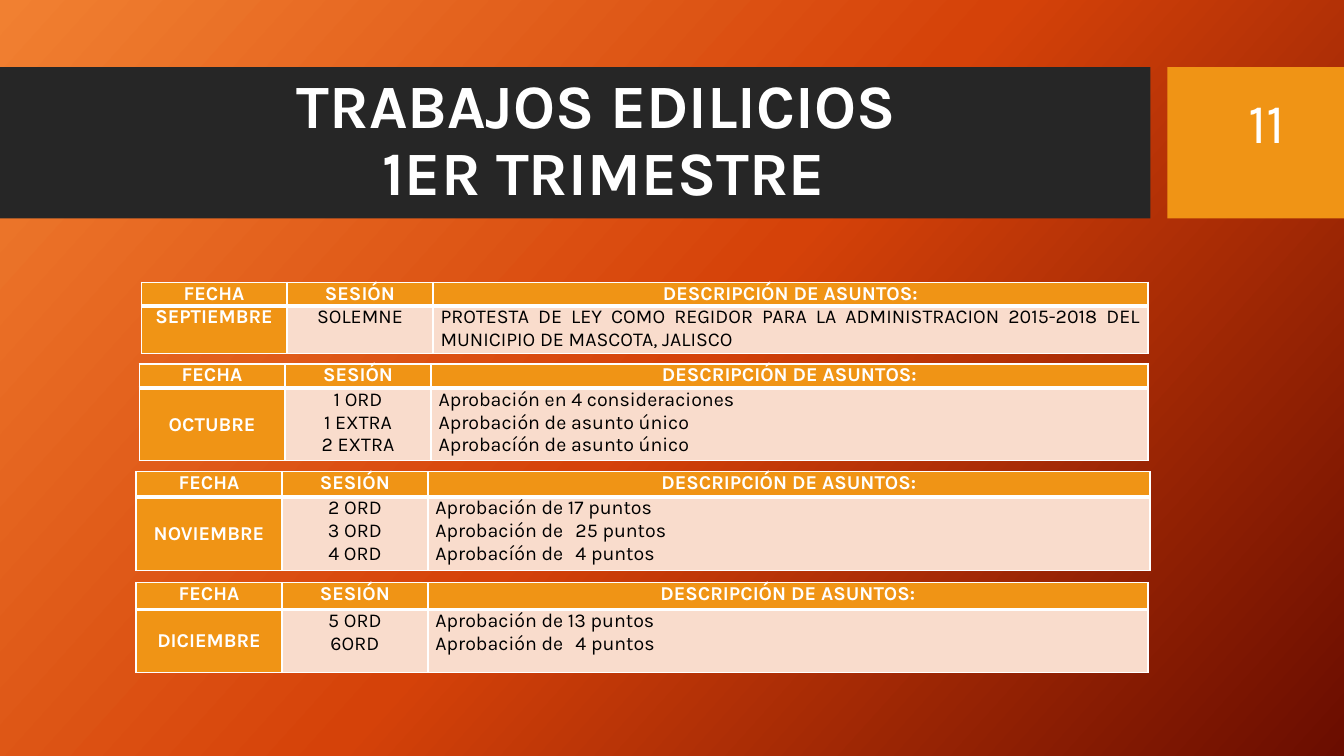
from pptx import Presentation
from pptx.dml.color import RGBColor
from pptx.enum.shapes import MSO_SHAPE
from pptx.enum.text import MSO_ANCHOR, MSO_AUTO_SIZE, PP_ALIGN
from pptx.oxml import parse_xml
from pptx.oxml.ns import nsdecls
from pptx.util import Pt

RECTANGLE = MSO_SHAPE.RECTANGLE
TOP, MIDDLE = MSO_ANCHOR.TOP, MSO_ANCHOR.MIDDLE
CENTER, JUSTIFY = PP_ALIGN.CENTER, PP_ALIGN.JUSTIFY
NO_AUTOFIT = MSO_AUTO_SIZE.NONE

FONT = "Karla"
WHITE, BLACK, CHARCOAL = "FFFFFF", "000000", "262626"
ORANGE, PEACH = "F09415", "F9DCCC"
GRADIENT = [(0, "F18031"), (50, "D54209"), (100, "6A0D00")]
GRADIENT_ANGLE = 42
HEADINGS = ["FECHA", "SESIÓN", "DESCRIPCIÓN DE ASUNTOS:"]
NARROW_COLUMN = 104.25
NUMBER_TAB = 100

MONTHS = [
    dict(name="SEPTIEMBRE", box=(100.8, 201.6, 719.3), rows=(17, 34), anchor=TOP,
         sessions=["SOLEMNE"],
         matters=["PROTESTA DE LEY COMO REGIDOR PARA LA ADMINISTRACION "
                  "2015-2018 DEL MUNICIPIO DE MASCOTA, JALISCO"]),
    dict(name="OCTUBRE", box=(99.4, 260, 720.7), rows=(17.3, 51.8),
         sessions=["1 ORD", "1 EXTRA", "2 EXTRA"],
         matters=["Aprobación en 4 consideraciones", "Aprobación de asunto único",
                  "Aprobacíón de asunto único"]),
    dict(name="NOVIEMBRE", box=(97.2, 337, 724.3), rows=(17.8, 53),
         sessions=["2 ORD", "3 ORD", "4 ORD"],
         matters=["Aprobación de 17 puntos", "Aprobación de\t25 puntos",
                  "Aprobacíón de\t4 puntos"]),
    dict(name="DICIEMBRE", box=(97.2, 416.2, 722.9), rows=(19.2, 45),
         sessions=["5 ORD", "6ORD"],
         matters=["Aprobación de 13 puntos", "Aprobación de\t4 puntos"]),
]


def color(hex_string):
    """Return the colour for a hex string."""
    return RGBColor.from_string(hex_string)


def write(frame, lines, size=14, ink=WHITE, bold=False, align=CENTER, spacing=None):
    """Fill a text frame with one formatted paragraph per line."""
    for index, line in enumerate(lines):
        paragraph = frame.add_paragraph() if index else frame.paragraphs[0]
        paragraph.alignment = align
        if spacing:
            paragraph.line_spacing = spacing
        paragraph.text = line
        if "\t" in line:
            paragraph._p.get_or_add_pPr().append(parse_xml(
                f'<a:tabLst {nsdecls("a")}><a:tab pos="{Pt(NUMBER_TAB)}" algn="l"/></a:tabLst>'))
        for run in paragraph.runs:
            run.font.name = FONT
            run.font.size = Pt(size)
            run.font.bold = bold
            run.font.color.rgb = color(ink)


def paint_background(slide):
    """Give the slide its diagonal gradient."""
    stops = "".join(f'<a:gs pos="{position * 1000}"><a:srgbClr val="{value}"/></a:gs>'
                    for position, value in GRADIENT)
    slide.element.cSld.insert(0, parse_xml(
        f'<p:bg {nsdecls("p", "a")}><p:bgPr><a:gradFill rotWithShape="1">'
        f'<a:gsLst>{stops}</a:gsLst><a:lin ang="{GRADIENT_ANGLE * 60000}" scaled="0"/>'
        '</a:gradFill><a:effectLst/></p:bgPr></p:bg>'))


def add_band(slide, left, width, fill):
    """Add one block of the title band."""
    band = slide.shapes.add_shape(RECTANGLE, Pt(left), Pt(48), Pt(width), Pt(108))
    band.shadow.inherit = False
    band.fill.solid()
    band.fill.fore_color.rgb = color(fill)
    band.line.fill.background()


def place_title(slide, text):
    """Move the title placeholder onto the band and fill it."""
    title = slide.shapes.title
    title.element.getparent().append(title.element)
    title.left, title.top, title.width, title.height = Pt(53.3), Pt(59), Pt(756.7), Pt(85)
    frame = title.text_frame
    frame.auto_size = NO_AUTOFIT
    frame.word_wrap = True
    frame.vertical_anchor = MIDDLE
    write(frame, [text], size=44, bold=True, spacing=0.9)


def add_slide_number(slide, number):
    """Add the slide number in the orange block."""
    box = slide.shapes.add_textbox(Pt(876.2), Pt(59), Pt(56.9), Pt(55.4))
    box.text_frame.word_wrap = False
    write(box.text_frame, [number], size=40)


def format_cell(cell, lines, fill, top=1, bottom=1, anchor=TOP, **text_format):
    """Set the text, fill and borders of a table cell."""
    cell.margin_left = cell.margin_right = Pt(5.4)
    cell.margin_top = cell.margin_bottom = 0
    cell.vertical_anchor = anchor
    cell.fill.solid()
    cell.fill.fore_color.rgb = color(fill)
    properties = cell._tc.get_or_add_tcPr()
    for index, (side, width) in enumerate([("L", 1), ("R", 1), ("T", top), ("B", bottom)]):
        properties.insert(index, parse_xml(
            f'<a:ln{side} {nsdecls("a")} w="{Pt(width)}"><a:solidFill>'
            f'<a:srgbClr val="{WHITE}"/></a:solidFill></a:ln{side}>'))
    write(cell.text_frame, lines, **text_format)


def add_month_table(slide, name, box, rows, sessions, matters, anchor=MIDDLE):
    """Add the table of sessions of one month."""
    left, top, width = box
    table = slide.shapes.add_table(2, 3, Pt(left), Pt(top), Pt(width), Pt(sum(rows))).table
    widths = [NARROW_COLUMN, NARROW_COLUMN, width - 2 * NARROW_COLUMN]
    for column, column_width in zip(table.columns, widths):
        column.width = Pt(column_width)
    for row, height in zip(table.rows, rows):
        row.height = Pt(height)
    for index, heading in enumerate(HEADINGS):
        format_cell(table.cell(0, index), [heading], ORANGE, bottom=3, bold=True)
    format_cell(table.cell(1, 0), [name], ORANGE, top=3, anchor=anchor, bold=True)
    format_cell(table.cell(1, 1), sessions, PEACH, top=3, ink=BLACK)
    format_cell(table.cell(1, 2), matters, PEACH, top=3, ink=BLACK, align=JUSTIFY)


def main():
    """Build and save the presentation."""
    presentation = Presentation()
    presentation.slide_width, presentation.slide_height = Pt(960), Pt(540)
    slide = presentation.slides.add_slide(presentation.slide_layouts[5])
    paint_background(slide)
    add_band(slide, 0, 821.8, CHARCOAL)
    add_band(slide, 833.8, 126.2, ORANGE)
    place_title(slide, "TRABAJOS EDILICIOS \v1ER TRIMESTRE")
    add_slide_number(slide, "11")
    for month in MONTHS:
        add_month_table(slide, **month)
    presentation.save("out.pptx")


if __name__ == "__main__":
    main()
